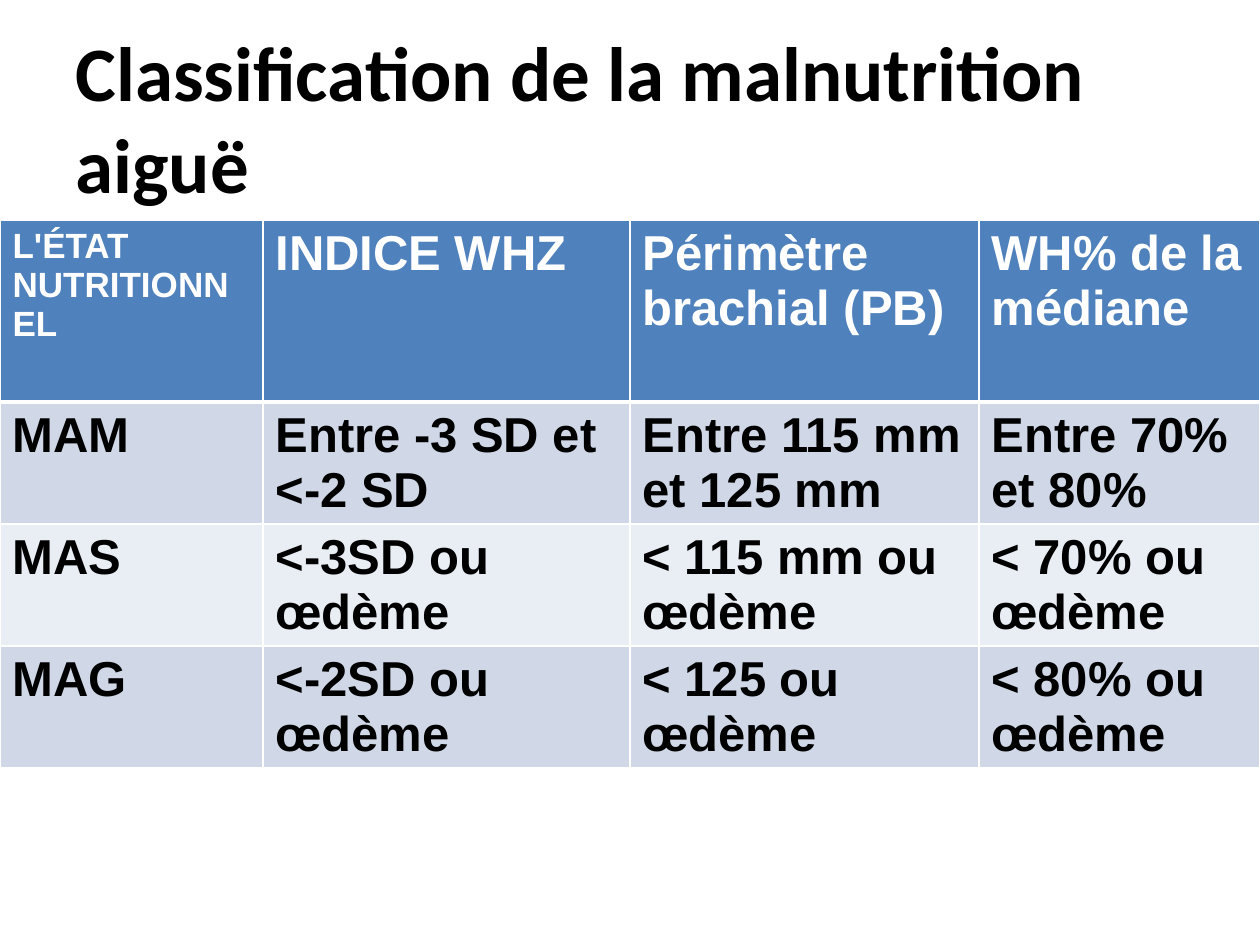
import pptx
import pptx.util
import pptx.dml.color
import pptx.enum.text
import pptx.oxml
import pptx.oxml.ns

RGB = pptx.dml.color.RGBColor
BLACK = RGB(0x00, 0x00, 0x00)
WHITE = RGB(0xFF, 0xFF, 0xFF)
BLUE = RGB(0x4F, 0x81, 0xBD)
DARK = RGB(0xD0, 0xD8, 0xE8)
LIGHT = RGB(0xE9, 0xED, 0xF4)

COLS = [263, 367, 349, 281]
ROWS = [182, 122, 122, 122]
CELLS = [
    ["L'ÉTAT NUTRITIONNEL", "INDICE WHZ", "Périmètre brachial (PB)", "WH% de la médiane"],
    ["MAM", "Entre -3 SD et <-2 SD", "Entre 115 mm et 125 mm", "Entre 70% et 80%"],
    ["MAS", "<-3SD ou œdème", "< 115 mm ou œdème", "< 70% ou œdème"],
    ["MAG", "<-2SD ou œdème", "< 125 ou œdème", "< 80% ou œdème"],
]


def px(n):
    return pptx.util.Emu(round(n * 914400 / 126))


def write(frame, text, face, size, color):
    para = frame.paragraphs[0]
    para.alignment = pptx.enum.text.PP_ALIGN.LEFT
    run = para.add_run()
    run.text = text
    run.font.name = face
    run.font.size = pptx.util.Pt(size)
    run.font.bold = True
    run.font.color.rgb = color


def edge(cell, side, width):
    line = pptx.oxml.parse_xml(
        f'<a:ln{side} {pptx.oxml.ns.nsdecls("a")} w="{pptx.util.Pt(width)}">'
        f'<a:solidFill><a:srgbClr val="{WHITE}"/></a:solidFill></a:ln{side}>'
    )
    cell._tc.get_or_add_tcPr().append(line)


def add_title(slide, left, top, width, height):
    title = slide.shapes.title
    title.left, title.top = px(left), px(top)
    title.width, title.height = px(width), px(height)
    frame = title.text_frame
    frame.word_wrap = True
    frame.auto_size = pptx.enum.text.MSO_AUTO_SIZE.NONE
    frame.vertical_anchor = pptx.enum.text.MSO_ANCHOR.MIDDLE
    write(frame, "Classification de la malnutrition aiguë", "Calibri", 44, BLACK)


def add_grid(slide, left, top, width, height):
    shape = slide.shapes.add_table(
        len(ROWS), len(COLS), px(left), px(top), px(width), px(height)
    )
    table = shape.table
    for col, size in zip(table.columns, COLS):
        col.width = px(width * size / sum(COLS))
    for row, size in zip(table.rows, ROWS):
        row.height = px(height * size / sum(ROWS))
    for r, texts in enumerate(CELLS):
        for c, text in enumerate(texts):
            cell = table.cell(r, c)
            for side in "LRTB":
                thick = (r, side) in [(0, "B"), (1, "T")]
                edge(cell, side, 3 if thick else 1)
            cell.fill.solid()
            cell.fill.fore_color.rgb = BLUE if r == 0 else DARK if r % 2 else LIGHT
            size = 20 if r == c == 0 else 28
            write(cell.text_frame, text, "Arial", size, BLACK if r else WHITE)


def main():
    deck = pptx.Presentation()
    deck.slide_width, deck.slide_height = px(1260), px(945)
    slide = deck.slides.add_slide(deck.slide_layouts[5])
    add_title(slide, 63, 38, 1134, 158)
    add_grid(slide, 0, 220, 1260, sum(ROWS))
    deck.save("out.pptx")


if __name__ == "__main__":
    main()
